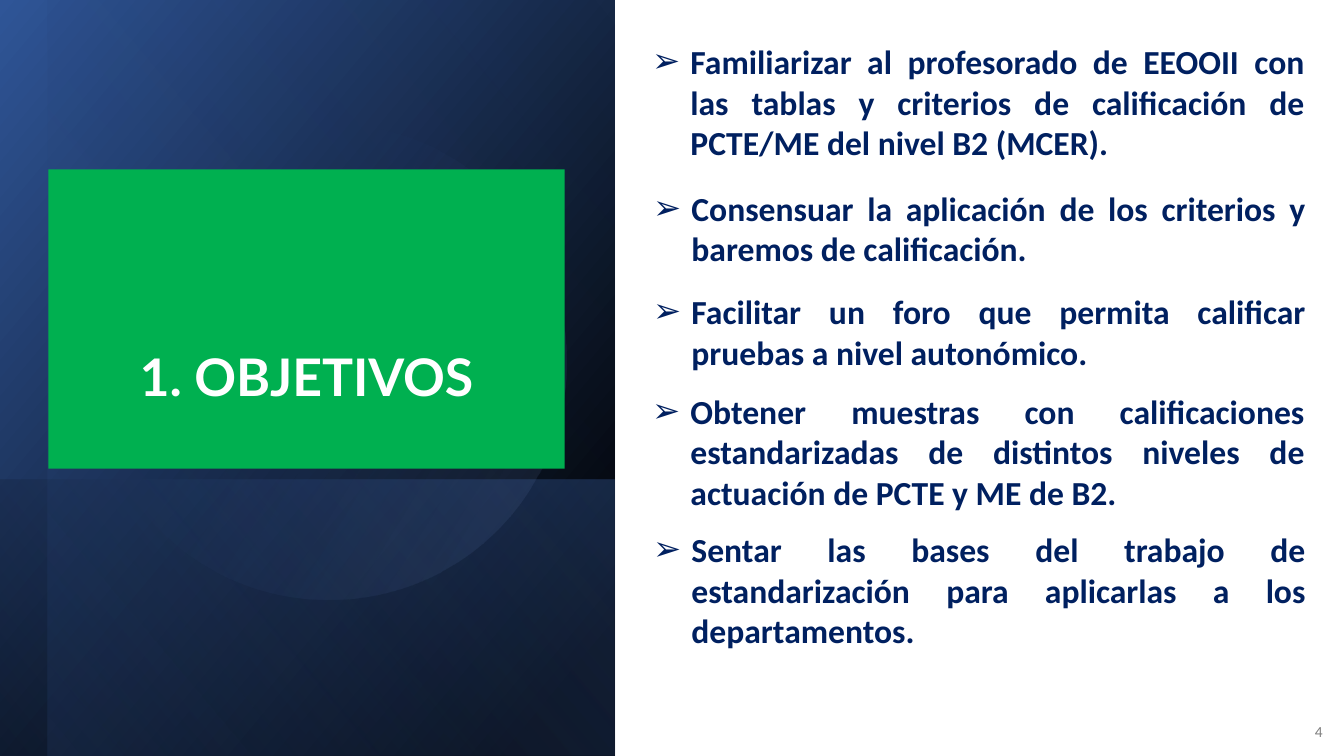
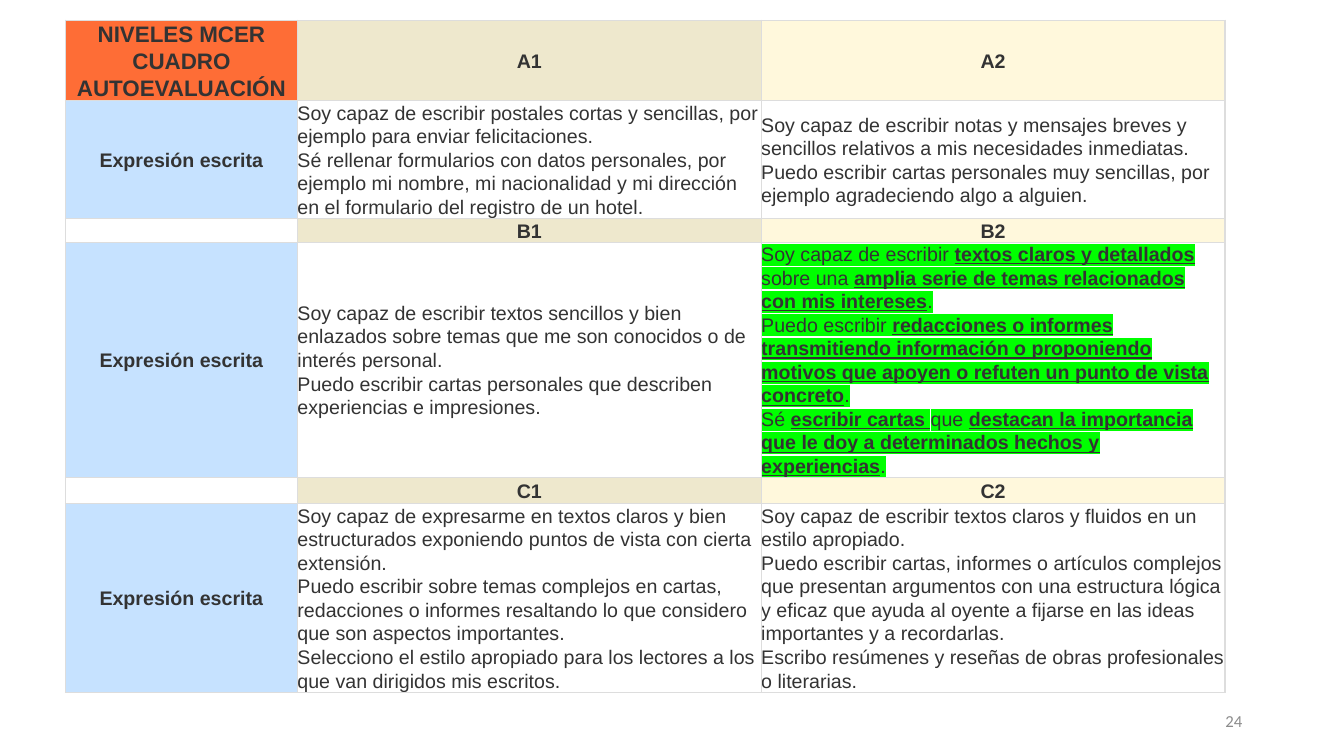
import pptx
import pptx.util
import pptx.dml.color
import pptx.enum.shapes
import pptx.enum.text
import pptx.oxml.ns
from lxml import etree

Inches = pptx.util.Inches
Pt = pptx.util.Pt
qn = pptx.oxml.ns.qn
ALIGN = pptx.enum.text.PP_ALIGN
ANCHOR = pptx.enum.text.MSO_ANCHOR
SHAPE = pptx.enum.shapes.MSO_SHAPE

WHITE, BLACK, BLUE = "FFFFFF", "000000", "4472C4"
GREEN, NAVY, DARK = "00B050", "002060", "333333"
ORANGE, SKY, SAND, CREAM = "FE6D36", "C6E2FF", "EEE8CD", "FFF8DC"
BORDER, HIGHLIGHT = "DDDDDD", "00FF00"


def rgb(color):
    return pptx.dml.color.RGBColor.from_string(color)


def add_span(para, text, size, color, font="Calibri", bold=False):
    span = para.add_run()
    span.text = text
    span.font.size = Pt(size)
    span.font.name = font
    span.font.bold = bold
    span.font.color.rgb = rgb(color)
    return span


deck = pptx.Presentation()
deck.slide_width = Inches(13.33)
deck.slide_height = Inches(7.5)
blank = deck.slide_layouts[6]

# Objectives: gradient panels on the left, bulleted goals on the right
goals_slide = deck.slides.add_slide(blank)

# preset, place, rotation, mirrored, gradient angle, stops (position, colour, opacity)
panels = [
    (SHAPE.RECTANGLE, (-0.7, 0.7, 7.5, 6.1), 90, True, 50,
     [(8, BLACK, 100), (100, "2F5597", 100)]),
    (SHAPE.RECTANGLE, (1.67, 3.08, 2.74, 6.1), 90, True, 130,
     [(2, BLUE, 29), (100, BLACK, 30)]),
    (SHAPE.RECTANGLE, (-0.46, 0.93, 7.5, 5.63), 90, True, 130,
     [(0, BLACK, 0), (99, BLUE, 11)]),
    (SHAPE.OVAL, (0.9, 1.23, 4.72, 4.72), 101.6, False, 290,
     [(39, BLUE, 0), (100, "8FAADC", 15)]),
]
for preset, place, rotation, mirrored, angle, stops in panels:
    panel = goals_slide.shapes.add_shape(preset, *map(Inches, place))
    panel.shadow.inherit = False
    panel.line.fill.background()
    panel.rotation = rotation
    if mirrored:
        panel.element.spPr.find(qn("a:xfrm")).set("flipH", "1")
    panel.fill.gradient()
    panel.fill.gradient_angle = 360 - angle
    for stop, (position, color, opacity) in zip(panel.fill.gradient_stops, stops):
        stop.position = position / 100
        stop.color.rgb = rgb(color)
    for node, (position, color, opacity) in zip(panel.element.spPr.iter(qn("a:srgbClr")), stops):
        etree.SubElement(node, qn("a:alpha"), val=str(opacity * 1000))

title = goals_slide.shapes.add_shape(
    SHAPE.RECTANGLE, Inches(0.48), Inches(1.68), Inches(5.12), Inches(2.97))
title.shadow.inherit = False
title.fill.solid()
title.fill.fore_color.rgb = rgb(GREEN)
title.line.fill.background()
title.text_frame.vertical_anchor = ANCHOR.BOTTOM
title.text_frame.margin_bottom = Inches(0.61)
para = title.text_frame.paragraphs[0]
para.alignment = ALIGN.CENTER
para.line_spacing = 0.9
add_span(para, "1. OBJETIVOS", 37, WHITE, "Lato", True)

goals = [
    (6.37, 0.36, 1.31, "Familiarizar al profesorado de EEOOII con las tablas y criterios de "
                       "calificación de PCTE/ME del nivel B2 (MCER)."),
    (6.38, 1.81, 0.91, "Consensuar la aplicación de los criterios y baremos de calificación."),
    (6.38, 2.84, 0.91, "Facilitar un foro que permita calificar pruebas a nivel autonómico."),
    (6.37, 3.83, 1.31, "Obtener muestras con calificaciones estandarizadas de distintos niveles "
                       "de actuación de PCTE y ME de B2."),
    (6.38, 5.2, 1.31, "Sentar las bases del trabajo de estandarización para aplicarlas a los "
                      "departamentos."),
]
for left, top, height, goal in goals:
    box = goals_slide.shapes.add_textbox(Inches(left), Inches(top), Inches(6.67), Inches(height))
    box.text_frame.word_wrap = True
    para = box.text_frame.paragraphs[0]
    para.alignment = ALIGN.JUSTIFY
    add_span(para, goal, 24, NAVY, bold=True)
    properties = para._p.get_or_add_pPr()
    properties.set("marL", str(Inches(0.38)))
    properties.set("indent", str(Inches(-0.38)))
    etree.SubElement(properties, qn("a:buFont"), typeface="Calibri")
    etree.SubElement(properties, qn("a:buChar"), char="➢")

# Self-assessment grid: asterisks enclose the emphasised words of a highlighted cell
levels_slide = deck.slides.add_slide(blank)
label = "Expresión escrita"
rows = [
    ("NIVELES MCER\nCUADRO AUTOEVALUACIÓN", "A1", "A2"),
    (label,
     "Soy capaz de escribir postales cortas y sencillas, por ejemplo para enviar felicitaciones.\n"
     "Sé rellenar formularios con datos personales, por ejemplo mi nombre, mi nacionalidad y mi "
     "dirección en el formulario del registro de un hotel.",
     "Soy capaz de escribir notas y mensajes breves y sencillos relativos a mis necesidades "
     "inmediatas.\n"
     "Puedo escribir cartas personales muy sencillas, por ejemplo agradeciendo algo a alguien."),
    ("", "B1", "B2"),
    (label,
     "Soy capaz de escribir textos sencillos y bien enlazados sobre temas que me son conocidos o "
     "de interés personal.\n"
     "Puedo escribir cartas personales que describen experiencias e impresiones.",
     "Soy capaz de escribir *textos claros y detallados *sobre una *amplia serie de temas "
     "relacionados con mis intereses*.\n"
     "Puedo escribir *redacciones o informes transmitiendo información o proponiendo motivos que "
     "apoyen o refuten un punto de vista concreto*.\n"
     "Sé *escribir cartas *que *destacan la importancia que le doy a determinados hechos y "
     "experiencias*."),
    ("", "C1", "C2"),
    (label,
     "Soy capaz de expresarme en textos claros y bien estructurados exponiendo puntos de vista "
     "con cierta extensión.\n"
     "Puedo escribir sobre temas complejos en cartas, redacciones o informes resaltando lo que "
     "considero que son aspectos importantes.\n"
     "Selecciono el estilo apropiado para los lectores a los que van dirigidos mis escritos.",
     "Soy capaz de escribir textos claros y fluidos en un estilo apropiado.\n"
     "Puedo escribir cartas, informes o artículos complejos que presentan argumentos con una "
     "estructura lógica y eficaz que ayuda al oyente a fijarse en las ideas importantes y a "
     "recordarlas.\n"
     "Escribo resúmenes y reseñas de obras profesionales o literarias."),
]
widths = [2.3, 4.6, 4.6]
heights = [0.79, 1.17, 0.23, 2.33, 0.26, 1.87]
grid = levels_slide.shapes.add_table(
    len(rows), len(widths), Inches(0.65), Inches(0.2),
    Inches(sum(widths)), Inches(sum(heights))).table
grid.first_row = False
grid.horz_banding = False
for column, width in zip(grid.columns, widths):
    column.width = Inches(width)

for r, texts in enumerate(rows):
    grid.rows[r].height = Inches(heights[r])
    is_level_row = r % 2 == 0
    for c, text in enumerate(texts):
        cell = grid.cell(r, c)
        cell.margin_left = cell.margin_right = cell.margin_top = cell.margin_bottom = 0
        cell.vertical_anchor = ANCHOR.MIDDLE
        for side in ("a:lnL", "a:lnR", "a:lnT", "a:lnB"):
            edge = etree.SubElement(cell._tc.get_or_add_tcPr(), qn(side), w=str(Pt(1)))
            edge_fill = etree.SubElement(edge, qn("a:solidFill"))
            etree.SubElement(edge_fill, qn("a:srgbClr"), val=BORDER)

        if r == c == 0:
            color = ORANGE
        elif is_level_row:
            color = (WHITE, SAND, CREAM)[c]
        else:
            color = (SKY, WHITE, WHITE)[c]
        cell.fill.solid()
        cell.fill.fore_color.rgb = rgb(color)

        is_heading = is_level_row or c == 0
        size = 16 if r == c == 0 else 14
        for i, line in enumerate(text.split("\n")):
            para = cell.text_frame.paragraphs[0] if i == 0 else cell.text_frame.add_paragraph()
            para.alignment = ALIGN.CENTER if is_heading else ALIGN.LEFT
            para.line_spacing = Pt(size * 1.2)
            if not line:
                etree.SubElement(para._p, qn("a:endParaRPr"), sz="1400")
                continue
            for k, part in enumerate(line.split("*")):
                emphasised = k % 2 == 1
                span = add_span(para, part, size, DARK, "Arial", is_heading or emphasised)
                if emphasised:
                    span.font.underline = True
                if "*" in text:
                    mark = etree.Element(qn("a:highlight"))
                    etree.SubElement(mark, qn("a:srgbClr"), val=HIGHLIGHT)
                    span._r.rPr.find(qn("a:solidFill")).addnext(mark)

# Slide numbers
numbers = [
    (goals_slide, "4", SHAPE.OVAL, (12.8, 7.06, 0.49, 0.4), 11, "808080"),
    (levels_slide, "24", SHAPE.RECTANGLE, (9.42, 6.95, 3, 0.4), 12, "8C8C8C"),
]
for slide, number, preset, place, size, color in numbers:
    box = slide.shapes.add_shape(preset, *map(Inches, place))
    box.shadow.inherit = False
    box.fill.background()
    box.line.fill.background()
    box.text_frame.vertical_anchor = ANCHOR.MIDDLE
    para = box.text_frame.paragraphs[0]
    para.alignment = ALIGN.RIGHT
    add_span(para, number, size, color)

deck.save("out.pptx")
